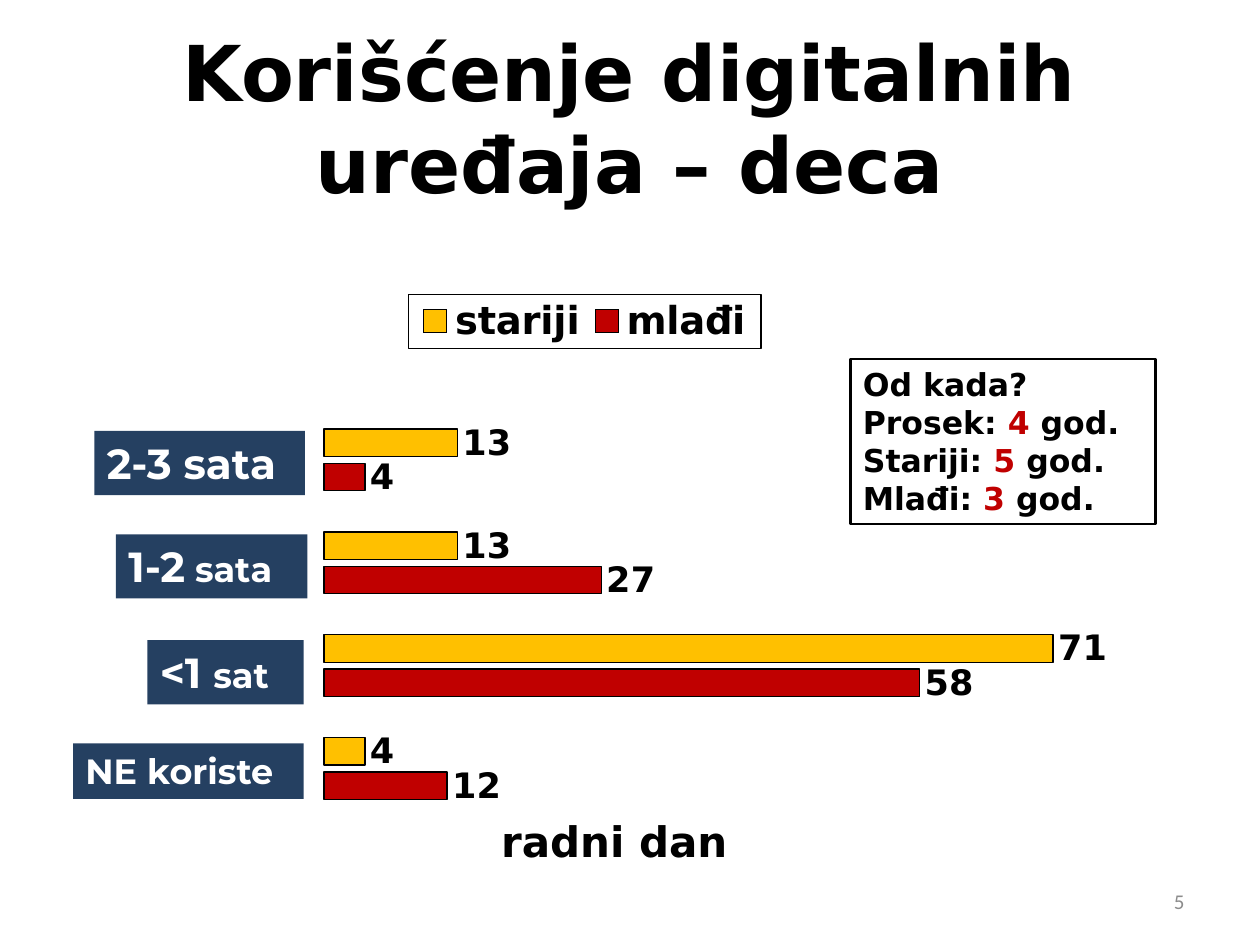
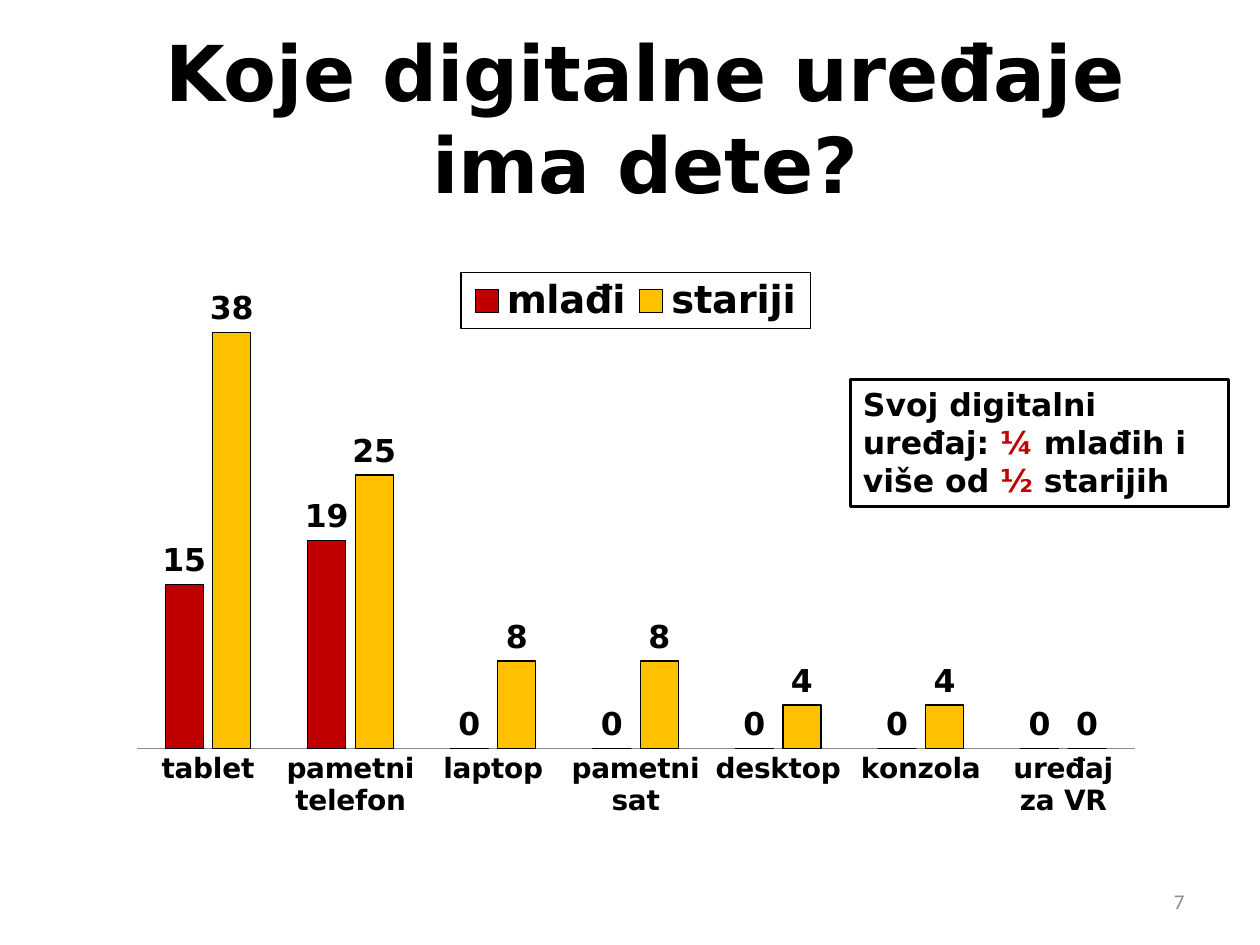
from lxml import etree
from pptx import Presentation
from pptx.chart.data import CategoryChartData
from pptx.dml.color import RGBColor
from pptx.enum.chart import XL_CHART_TYPE as CT, XL_LABEL_POSITION as LP
from pptx.enum.chart import XL_LEGEND_POSITION, XL_TICK_MARK
from pptx.enum.shapes import MSO_SHAPE
from pptx.enum.text import MSO_ANCHOR, MSO_AUTO_SIZE, PP_ALIGN
from pptx.oxml import parse_xml
from pptx.oxml.ns import nsdecls, qn
from pptx.util import Inches, Pt

BLACK, WHITE, RED, AMBER = "000000", "FFFFFF", "C00000", "FFC000"
NAVY, GREY = "254061", "8C8C8C"
MAIN, TAG, PLAIN = "DejaVu Sans", "Montserrat", "Calibri"
SERIES_COLORS = {"mlađi": RED, "stariji": AMBER}


def rgb(value):
    return RGBColor.from_string(value)


def set_font(font, size, color=BLACK, name=MAIN, bold=True):
    font.size, font.name, font.bold = Pt(size), name, bold
    font.color.rgb = rgb(color)


def set_line(line, color=BLACK, width=0.75):
    line.color.rgb = rgb(color)
    line.width = Pt(width)


def outline(run):
    """Give the letters a thin black edge."""
    run._r.get_or_add_rPr().insert(0, parse_xml(
        f'<a:ln {nsdecls("a")} w="9525"><a:solidFill>'
        f'<a:srgbClr val="{BLACK}"/></a:solidFill></a:ln>'))


def fill_text(sp, paragraphs, align=PP_ALIGN.LEFT, anchor=MSO_ANCHOR.TOP,
              name=MAIN, bold=True, wrap=True, grow=True, edged=False):
    """Each paragraph is a list of (text, size, color) runs."""
    tf = sp.text_frame
    tf.word_wrap, tf.vertical_anchor = wrap, anchor
    tf.auto_size = (MSO_AUTO_SIZE.SHAPE_TO_FIT_TEXT if grow
                    else MSO_AUTO_SIZE.NONE)
    for i, runs in enumerate(paragraphs):
        p = tf.add_paragraph() if i else tf.paragraphs[0]
        p.alignment = align
        for text, size, color in runs:
            r = p.add_run()
            r.text = text
            set_font(r.font, size, color, name, bold)
            if edged:
                outline(r)


def add_text(s, box, text, size, color=BLACK, **options):
    sp = s.shapes.add_textbox(*map(Inches, box))
    fill_text(sp, [[(text, size, color)]], **options)


def add_box(s, box):
    sp = s.shapes.add_shape(MSO_SHAPE.RECTANGLE, *map(Inches, box))
    sp.shadow.inherit = False
    return sp


def add_frame(s, title, number, title_width):
    """Title at the top and slide number at the bottom right."""
    add_text(s, (0.5, 0.3, title_width, 1.25), title, 44, align=PP_ALIGN.CENTER,
             anchor=MSO_ANCHOR.MIDDLE, grow=False, edged=True)
    add_text(s, (7.17, 6.95, 2.33, 0.4), str(number), 12, GREY, name=PLAIN,
             bold=False, align=PP_ALIGN.RIGHT, anchor=MSO_ANCHOR.MIDDLE,
             grow=False)


def add_note(s, box, lines):
    """Framed note; parts between bars are set in red."""
    sp = add_box(s, box)
    sp.fill.background()
    set_line(sp.line, width=1.5)
    fill_text(sp, [[(part, 18, RED if i % 2 else BLACK)
                    for i, part in enumerate(line.split("|"))]
                   for line in lines])


def add_tag(s, box, runs, wrap=False):
    """Navy label standing in for a category name."""
    sp = add_box(s, box)
    sp.fill.solid()
    sp.fill.fore_color.rgb = rgb(NAVY)
    sp.line.fill.background()
    fill_text(sp, [[(text, size, WHITE) for text, size in runs]],
              name=TAG, wrap=wrap)


def set_layout(element, position, inner=False):
    """Place a chart part by fractions of the chart: x, y, w, h."""
    old = element.find(qn("c:layout"))
    if old is not None:
        element.remove(old)
    layout = etree.Element(qn("c:layout"))
    manual = etree.SubElement(layout, qn("c:manualLayout"))
    values = [("layoutTarget", "inner")] if inner else []
    values += [("xMode", "edge"), ("yMode", "edge")]
    values += zip("xywh", position)
    for tag, value in values:
        etree.SubElement(manual, qn(f"c:{tag}")).set("val", str(value))
    if inner:
        element.insert(0, layout)
    else:
        element.find(qn("c:legendPos")).addnext(layout)


def add_bars(s, box, kind, categories, values, label_size, top, plot, legend):
    data = CategoryChartData()
    data.categories = categories
    for name, numbers in values.items():
        data.add_series(name, numbers)
    chart = s.shapes.add_chart(kind, *map(Inches, box), data).chart
    chart.has_title = False
    set_font(chart.font, 10, name=PLAIN, bold=False)

    # Bars and their values
    bars = chart.plots[0]
    bars.vary_by_categories = False
    bars.gap_width, bars.overlap = 150, -25
    for series in bars.series:
        series.format.fill.solid()
        series.format.fill.fore_color.rgb = rgb(SERIES_COLORS[series.name])
        series.invert_if_negative = False
        set_line(series.format.line)
        labels = series.data_labels
        labels.show_value, labels.position = True, LP.OUTSIDE_END
        set_font(labels.font, label_size)

    # Axes
    axis = chart.value_axis
    axis.minimum_scale, axis.maximum_scale = 0, top
    axis.has_major_gridlines = axis.visible = False
    axis = chart.category_axis
    axis.major_tick_mark = XL_TICK_MARK.NONE
    set_line(axis.format.line, GREY)
    set_font(axis.tick_labels.font, 16)

    # Framed legend
    chart.has_legend = True
    chart.legend.position = XL_LEGEND_POSITION.TOP
    chart.legend.include_in_layout = False
    set_font(chart.legend.font, 22)
    element = chart.legend._element
    element.find(qn("c:txPr")).addprevious(parse_xml(
        f'<c:spPr {nsdecls("c", "a")}><a:ln w="9525"><a:solidFill>'
        f'<a:srgbClr val="{BLACK}"/></a:solidFill></a:ln></c:spPr>'))
    set_layout(element, legend)
    set_layout(chart._chartSpace.chart.plotArea, plot, inner=True)
    return chart


def usage_slide(prs):
    s = prs.slides.add_slide(prs.slide_layouts[6])
    add_frame(s, "Korišćenje digitalnih uređaja – deca", 5, 9)
    chart = add_bars(
        s, (2.42, 2.33, 6.83, 4.33), CT.BAR_CLUSTERED, ["1", "2", "3", "4"],
        {"mlađi": (12, 58, 27, 4), "stariji": (4, 71, 13, 13)},
        label_size=20, top=80, plot=(0.022, 0.21, 0.955, 0.755),
        legend=(0.12, 0, 0.41, 0.1))
    chart.category_axis.visible = False

    # Category labels beside the bars
    add_tag(s, (1.17, 5.08, 1.24, 0.51), [("<1 ", 24), ("sat", 20)])
    add_tag(s, (0.92, 4.24, 1.52, 0.51), [("1-2", 24), (" sata", 20)])
    add_tag(s, (0.75, 3.42, 1.67, 0.51), [("2-3 sata", 24)])
    add_tag(s, (0.58, 5.9, 1.83, 0.44), [("NE koriste", 20)], wrap=True)

    add_note(s, (6.75, 2.85, 2.42, 1.31),
             ["Od kada?", "Prosek: |4| god.", "Stariji: |5 |god.",
              "Mlađi: |3| god."])
    add_text(s, (3.5, 6.42, 2.75, 0.5), "radni dan", 24,
             align=PP_ALIGN.CENTER, edged=True)


def devices_slide(prs):
    s = prs.slides.add_slide(prs.slide_layouts[6])
    add_frame(s, "Koje digitalne uređaje ima dete?", 7, 9.25)
    add_bars(
        s, (0.92, 1.83, 8.25, 4.75), CT.COLUMN_CLUSTERED,
        ["tablet", "pametni telefon", "laptop", "pametni sat", "desktop",
         "konzola", "uređaj za VR"],
        {"mlađi": (15, 19, 0, 0, 0, 0, 0), "stariji": (38, 25, 8, 8, 4, 4, 0)},
        label_size=18, top=40, plot=(0.02, 0.134, 0.96, 0.732),
        legend=(0.332, 0.07, 0.336, 0.094))
    add_note(s, (6.75, 3.01, 3, 1.01),
             ["Svoj digitalni uređaj: |¼| mlađih i", "više od |½| starijih"])


def main():
    prs = Presentation()
    prs.slide_width, prs.slide_height = Inches(10), Inches(7.5)
    usage_slide(prs)
    devices_slide(prs)
    prs.save("out.pptx")


if __name__ == "__main__":
    main()
